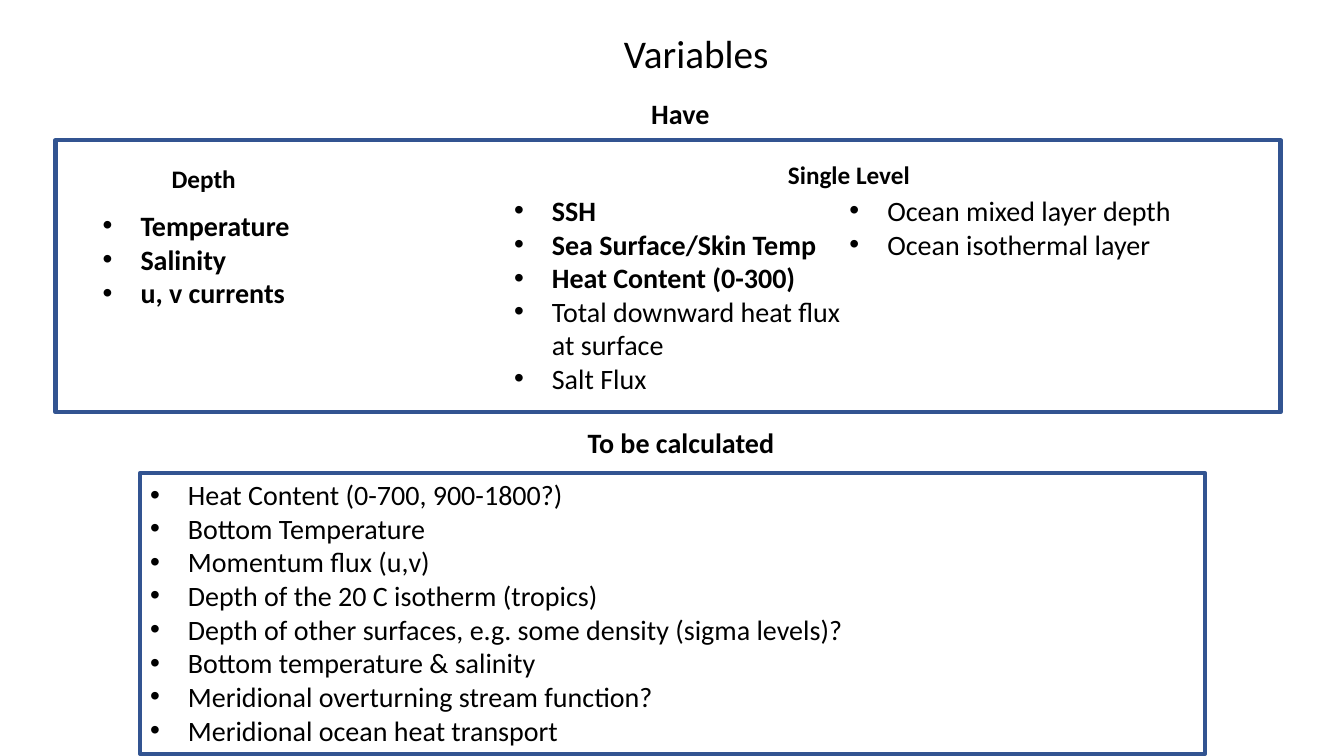
from dataclasses import dataclass

import pptx
import pptx.dml.color
import pptx.enum.shapes
import pptx.enum.text
import pptx.oxml.ns
import pptx.util
from lxml import etree

Inches = pptx.util.Inches
Anchor = pptx.enum.text.MSO_ANCHOR
Align = pptx.enum.text.PP_ALIGN
AutoSize = pptx.enum.text.MSO_AUTO_SIZE
BLACK = pptx.dml.color.RGBColor(0x00, 0x00, 0x00)
BLUE = pptx.dml.color.RGBColor(0x32, 0x54, 0x91)
FONT = "Calibri"
INDENT = Inches(0.375)


@dataclass(frozen=True)
class Area:
    left: float
    top: float
    width: float
    height: float

    def lengths(self) -> tuple:
        return tuple(Inches(n) for n in (self.left, self.top, self.width, self.height))


@dataclass(frozen=True)
class Label:
    text: str
    area: Area
    size: int = 20
    bold: bool = True
    section: bool = True


@dataclass(frozen=True)
class BulletList:
    area: Area
    bold_items: tuple[str, ...] = ()
    plain_items: tuple[str, ...] = ()
    columns: int = 1
    framed: bool = False


TITLE = Label("Variables", Area(3.89, 0.26, 6.03, 0.59), size=28, bold=False)
LABELS = (
    Label("Have", Area(6.36, 0.9, 1.08, 0.49)),
    Label("To be calculated", Area(5.73, 4.12, 2.36, 0.57)),
    Label("Depth", Area(1.14, 1.57, 1.76, 0.4), size=18, section=False),
    Label("Single Level", Area(7.54, 1.53, 1.76, 0.4), size=18, section=False),
)
HAVE_FRAME = Area(0.55, 1.39, 12.15, 2.7)
LISTS = (
    BulletList(
        Area(0.92, 2.02, 2.22, 1.5),
        bold_items=("Temperature", "Salinity", "u, v currents"),
    ),
    BulletList(
        Area(5, 1.87, 6.85, 2.12),
        bold_items=("SSH", "Sea Surface/Skin Temp", "Heat Content (0-300)"),
        plain_items=(
            "Total downward heat flux at surface",
            "Salt Flux",
            "Ocean mixed layer depth",
            "Ocean isothermal layer",
        ),
        columns=2,
    ),
    BulletList(
        Area(1.39, 4.69, 10.56, 2.79),
        plain_items=(
            "Heat Content (0-700, 900-1800?)",
            "Bottom Temperature",
            "Momentum flux (u,v)",
            "Depth of the 20 C isotherm (tropics)",
            "Depth of other surfaces, e.g. some density (sigma levels)?",
            "Bottom temperature & salinity",
            "Meridional overturning stream function?",
            "Meridional ocean heat transport",
        ),
        framed=True,
    ),
)


def add_span(para, text: str, size: int, bold: bool) -> None:
    span = para.add_run()
    span.text = text
    span.font.name = FONT
    span.font.size = pptx.util.Pt(size)
    span.font.bold = bold
    span.font.color.rgb = BLACK


def add_bullet(para) -> None:
    properties = para._p.get_or_add_pPr()
    properties.set("marL", str(INDENT))
    properties.set("indent", str(-INDENT))
    qualified = pptx.oxml.ns.qn
    etree.SubElement(properties, qualified("a:buFont"), typeface="Arial")
    etree.SubElement(properties, qualified("a:buChar"), char="•")


def add_frame(page, area: Area):
    frame = page.shapes.add_shape(
        pptx.enum.shapes.MSO_SHAPE.RECTANGLE, *area.lengths()
    )
    frame.shadow.inherit = False
    frame.fill.background()
    frame.line.color.rgb = BLUE
    frame.line.width = pptx.util.Pt(3)
    return frame


def add_title(page) -> None:
    box = page.shapes.title
    box.left, box.top, box.width, box.height = TITLE.area.lengths()
    box.text_frame.vertical_anchor = Anchor.MIDDLE
    box.text_frame.auto_size = AutoSize.NONE
    para = box.text_frame.paragraphs[0]
    para.alignment = Align.CENTER
    para.line_spacing = 0.9
    add_span(para, TITLE.text, TITLE.size, TITLE.bold)


def add_label(page, label: Label) -> None:
    box = page.shapes.add_textbox(*label.area.lengths())
    box.text_frame.word_wrap = True
    para = box.text_frame.paragraphs[0]
    if label.section:
        box.text_frame.vertical_anchor = Anchor.MIDDLE
        para.line_spacing = 0.9
    else:
        box.text_frame.auto_size = AutoSize.SHAPE_TO_FIT_TEXT
        para.alignment = Align.CENTER
    add_span(para, label.text, label.size, label.bold)


def add_list(page, bullets: BulletList) -> None:
    if bullets.framed:
        box = add_frame(page, bullets.area)
    else:
        box = page.shapes.add_textbox(*bullets.area.lengths())
    text = box.text_frame
    text.word_wrap = True
    text.auto_size = AutoSize.SHAPE_TO_FIT_TEXT
    text.vertical_anchor = Anchor.TOP
    if bullets.columns > 1:
        text._txBody.bodyPr.set("numCol", str(bullets.columns))
    items = [(item, True) for item in bullets.bold_items]
    items += [(item, False) for item in bullets.plain_items]
    for index, (item, bold) in enumerate(items):
        para = text.add_paragraph() if index else text.paragraphs[0]
        para.alignment = Align.LEFT
        add_bullet(para)
        add_span(para, item, 20, bold)


def main() -> None:
    deck = pptx.Presentation()
    deck.slide_width, deck.slide_height = Inches(13.33), Inches(7.5)
    page = deck.slides.add_slide(deck.slide_layouts.get_by_name("Title Only"))
    add_title(page)
    add_frame(page, HAVE_FRAME)
    for bullets in LISTS:
        add_list(page, bullets)
    for label in LABELS:
        add_label(page, label)
    deck.save("out.pptx")


if __name__ == "__main__":
    main()
